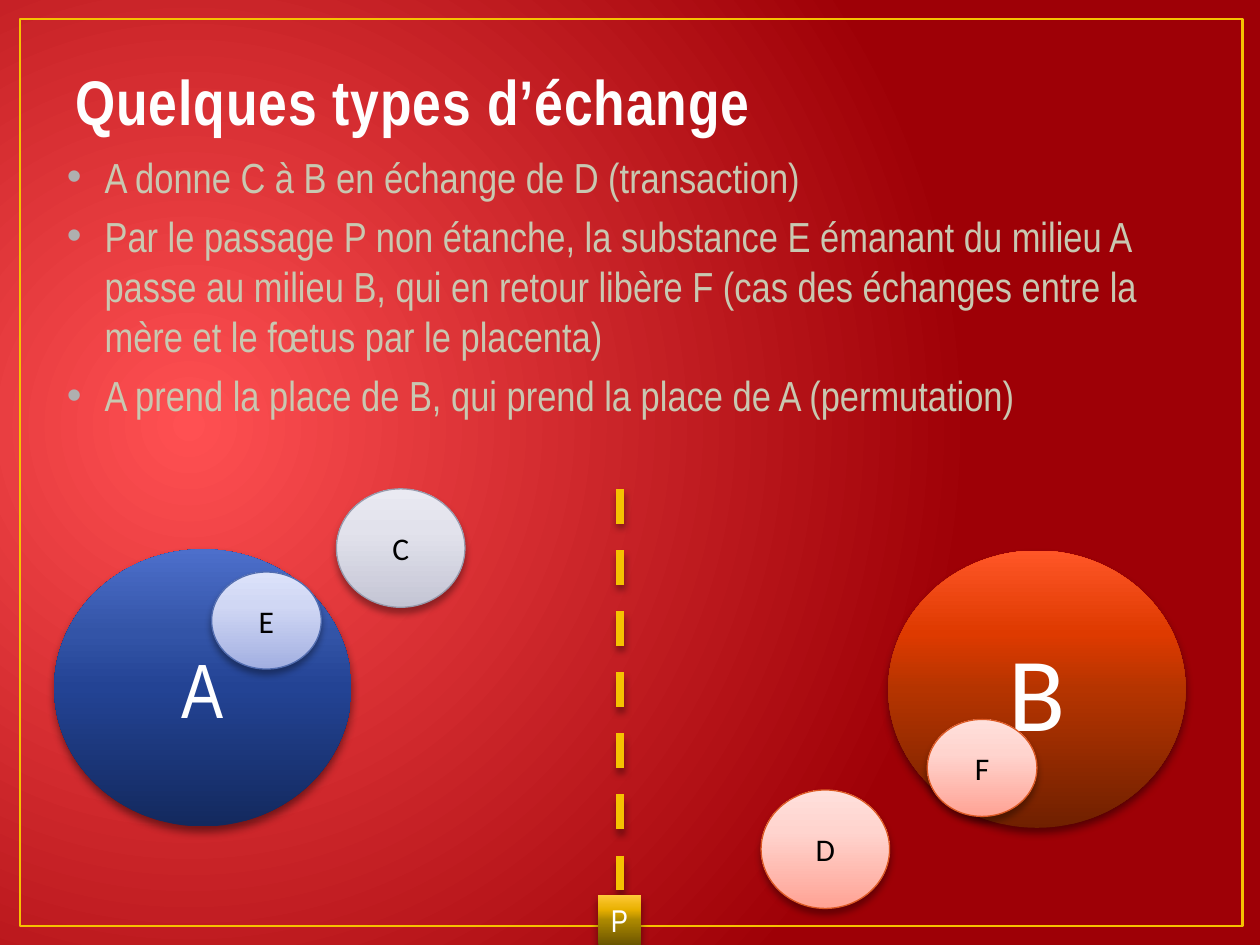
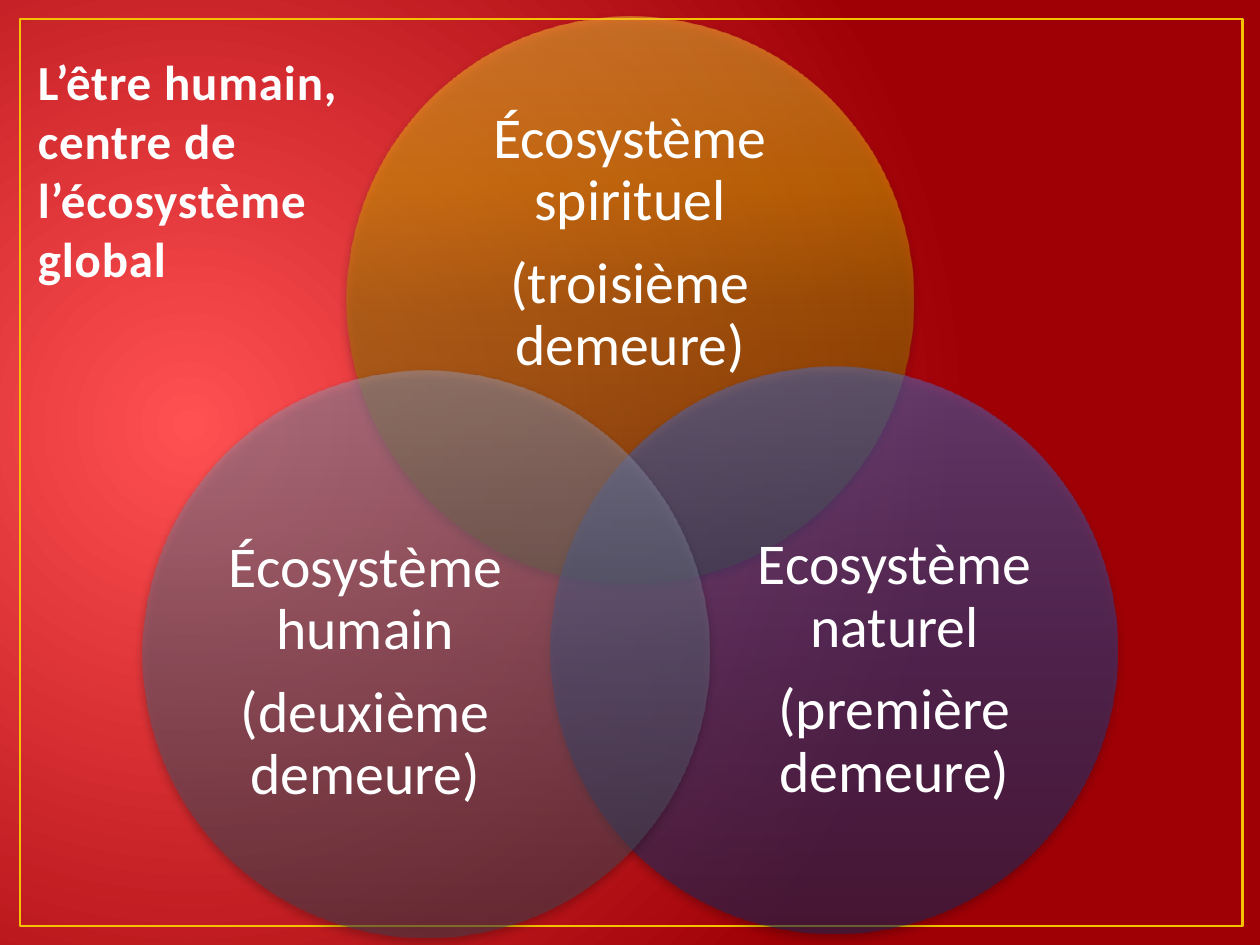
from lxml import etree
from pptx import Presentation
from pptx.dml.color import RGBColor
from pptx.enum import dml, shapes, text
from pptx.oxml import parse_xml
from pptx.oxml.ns import nsdecls, qn
from pptx.util import Inches, Pt

COLORS = {
    "glow": "FF5052", "crimson": "9E0006", "gold": "F5C201",
    "title": "FEFEFE", "title_edge": "3D3D3D", "body": "C8C8B1",
    "bullet": "AFAFAF", "white": "FFFFFF", "black": "000000",
    "grey_edge": "989AAC", "red_edge": "DC5924", "blue_edge": "526DB0",
}
STRONG_STOPS = (0, 50, 70, 100)
PALE_STOPS = (0, 65, 100)
RAMPS = {
    "blue": ("13295E", "234394", "3354A7", "4D6FCB"),
    "orange": ("702000", "B53400", "DE3A00", "FF5627"),
    "gold": ("6C5500", "AE8A00", "E8B000", "FFCA39"),
    "grey": ("3F414F", "66697E", "7B7D94", "9A9CB6"),
    "pale_grey": ("C4C5D4", "E2E2EC", "EAEAF2"),
    "pale_red": ("FFA294", "FFD4CE", "FFE0DC"),
    "pale_blue": ("A2AFE1", "D0D7F4", "DCE2FA"),
}


def paint(shape, ramp=None, edge=None, opacity=100):
    if ramp:
        hues = RAMPS[ramp]
        places = STRONG_STOPS if len(hues) == 4 else PALE_STOPS
        stops = "".join(
            f'<a:gs pos="{place * 1000}"><a:srgbClr val="{hue}">'
            f'<a:alpha val="{opacity * 1000}"/></a:srgbClr></a:gs>'
            for place, hue in zip(places, hues))
        shape._element.spPr.append(parse_xml(
            f'<a:gradFill {nsdecls("a")} rotWithShape="1"><a:gsLst>{stops}</a:gsLst>'
            '<a:lin ang="16200000" scaled="0"/></a:gradFill>'))
        if edge:
            shape.line.color.rgb = RGBColor.from_string(COLORS[edge])
            shape.line.width = Pt(0.75)
        else:
            shape.line.fill.background()
    strong = ramp and not edge
    alpha, blur, distance = (45, 5, 3) if strong else (35, 4, 3)
    shape._element.spPr.append(parse_xml(
        f'<a:effectLst {nsdecls("a")}><a:outerShdw blurRad="{Pt(blur)}" '
        f'dist="{Pt(distance)}" dir="5400000" rotWithShape="0">'
        f'<a:srgbClr val="{COLORS["black"]}"><a:alpha val="{alpha * 1000}"/>'
        '</a:srgbClr></a:outerShdw></a:effectLst>'))


def write(para, words, size, font, color):
    span = para.add_run()
    span.text = words
    span.font.size = Pt(size)
    span.font.name = font
    span.font.color.rgb = RGBColor.from_string(COLORS[color])
    return span


deck = Presentation()
deck.slide_width, deck.slide_height = Inches(10), Inches(7.5)
exchange_page = deck.slides.add_slide(deck.slide_layouts[1])
ecosystem_page = deck.slides.add_slide(deck.slide_layouts[5])

master = deck.slide_master
master_content = master._element.cSld
master_content.remove(master_content.find(qn("p:bg")))
master_content.insert(0, parse_xml(
    f'<p:bg {nsdecls("p", "a")}><p:bgPr><a:gradFill rotWithShape="1"><a:gsLst>'
    f'<a:gs pos="0"><a:srgbClr val="{COLORS["glow"]}"/></a:gs>'
    f'<a:gs pos="100000"><a:srgbClr val="{COLORS["crimson"]}"/></a:gs></a:gsLst>'
    '<a:path path="circle"><a:fillToRect l="15000" t="50000" r="85000" b="60000"/>'
    '</a:path></a:gradFill><a:effectLst/></p:bgPr></p:bg>'))

frame = exchange_page.shapes.add_shape(
    shapes.MSO_SHAPE.RECTANGLE, Inches(0.16), Inches(0.15), Inches(9.7), Inches(7.2))
frame.fill.background()
frame.line.color.rgb = RGBColor.from_string(COLORS["gold"])
frame.line.width = Pt(1.5)
frame.shadow.inherit = False
master.shapes._spTree.append(frame._element)

titles = [
    (exchange_page, "Quelques types d’échange", 36, "Arial Narrow", (0.5, 0.3, 9, 0.85)),
    (ecosystem_page, "L’être humain, centre de l’écosystème global", 28, "Calibri",
     (0.2, 0.13, 2.83, 2.2)),
]
for page, words, size, font, place in titles:
    title = page.shapes.title
    title.left, title.top, title.width, title.height = map(Inches, place)
    title.text_frame.vertical_anchor = text.MSO_ANCHOR.BOTTOM
    title.text_frame.auto_size = text.MSO_AUTO_SIZE.NONE
    para = title.text_frame.paragraphs[0]
    para.alignment = text.PP_ALIGN.LEFT
    span = write(para, words, size, font, "title")
    span.font.bold = True
    properties = span.font._element
    properties.set("spc", "50")
    properties.insert(0, parse_xml(
        f'<a:ln {nsdecls("a")} w="{Pt(1.05)}"><a:solidFill>'
        f'<a:srgbClr val="{COLORS["title_edge"]}"/></a:solidFill></a:ln>'))

body = exchange_page.placeholders[1]
body.left, body.top, body.width, body.height = map(Inches, (0.43, 1.15, 9, 4.95))
body.text_frame.auto_size = text.MSO_AUTO_SIZE.NONE
exchanges = [
    "A donne C à B en échange de D (transaction)",
    "Par le passage P non étanche, la substance E émanant du milieu A passe au milieu B, "
    "qui en retour libère F (cas des échanges entre la mère et le fœtus par le placenta)",
    "A prend la place de B, qui prend la place de A (permutation)",
]
for index, words in enumerate(exchanges):
    para = body.text_frame.add_paragraph() if index else body.text_frame.paragraphs[0]
    write(para, words, 24, "Arial Narrow", "body")
    properties = para._p.get_or_add_pPr()
    properties.set("marL", str(Inches(0.3)))
    properties.set("indent", str(Inches(-0.3)))
    bullet_color = etree.SubElement(properties, qn("a:buClr"))
    etree.SubElement(bullet_color, qn("a:srgbClr")).set("val", COLORS["bullet"])

large, medium, small = (2.36, 2.2), (1.02, 0.94), (0.87, 0.77)
bodies = [
    ("A", 0.43, 4.36, large, "blue", None, 44, "Arial Narrow", "white"),
    ("B", 7.05, 4.37, large, "orange", None, 60, "Calibri", "white"),
    ("C", 2.67, 3.88, medium, "pale_grey", "grey_edge", 18, "Calibri", "black"),
    ("D", 6.04, 6.27, medium, "pale_red", "red_edge", 18, "Calibri", "black"),
    ("E", 1.68, 4.54, small, "pale_blue", "blue_edge", 18, "Calibri", "black"),
    ("F", 7.36, 5.71, small, "pale_red", "red_edge", 18, "Calibri", "black"),
]
for letter, left, top, extent, ramp, edge, size, font, color in bodies:
    circle = exchange_page.shapes.add_shape(
        shapes.MSO_SHAPE.OVAL, Inches(left), Inches(top), *map(Inches, extent))
    paint(circle, ramp, edge)
    para = circle.text_frame.paragraphs[0]
    para.alignment = text.PP_ALIGN.CENTER
    write(para, letter, size, font, color)

passage = exchange_page.shapes.add_connector(
    shapes.MSO_CONNECTOR.STRAIGHT, Inches(4.92), Inches(3.88), Inches(4.92), Inches(7.1))
passage.line.color.rgb = RGBColor.from_string(COLORS["gold"])
passage.line.width = Pt(5)
passage.line.dash_style = dml.MSO_LINE.DASH
paint(passage)

passage_label = exchange_page.shapes.add_shape(
    shapes.MSO_SHAPE.RECTANGLE, Inches(4.75), Inches(7.1), Inches(0.34), Inches(0.4))
paint(passage_label, "gold")
passage_label.text_frame.word_wrap = False
passage_label.text_frame.auto_size = text.MSO_AUTO_SIZE.SHAPE_TO_FIT_TEXT
para = passage_label.text_frame.paragraphs[0]
para.alignment = text.PP_ALIGN.LEFT
write(para, "P", 18, "Arial Narrow", "white")

ecosystems = [
    ("gold", (2.75, 0.13), (3.35, 0.92, 3.3, 2.02),
     ("Écosystème spirituel", "(troisième demeure)")),
    ("blue", (4.37, 2.91), (5.75, 4.08, 2.7, 2.47),
     ("Ecosystème naturel", "(première demeure)")),
    ("grey", (1.13, 2.94), (1.55, 4.1, 2.7, 2.47),
     ("Écosystème humain", "(deuxième demeure)")),
]
for ramp, corner, label_place, lines in ecosystems:
    circle = ecosystem_page.shapes.add_shape(
        shapes.MSO_SHAPE.OVAL, *map(Inches, corner), Inches(4.5), Inches(4.5))
    paint(circle, ramp, opacity=50)
    label = ecosystem_page.shapes.add_textbox(*map(Inches, label_place)).text_frame
    label.word_wrap = True
    label.vertical_anchor = text.MSO_ANCHOR.MIDDLE
    label.margin_left = label.margin_right = label.margin_top = label.margin_bottom = 0
    for index, words in enumerate(lines):
        para = label.add_paragraph() if index else label.paragraphs[0]
        para.alignment = text.PP_ALIGN.CENTER
        para.line_spacing = 0.9
        para.space_after = Pt(11.55)
        write(para, words, 33, "Calibri", "white")

deck.save("out.pptx")
